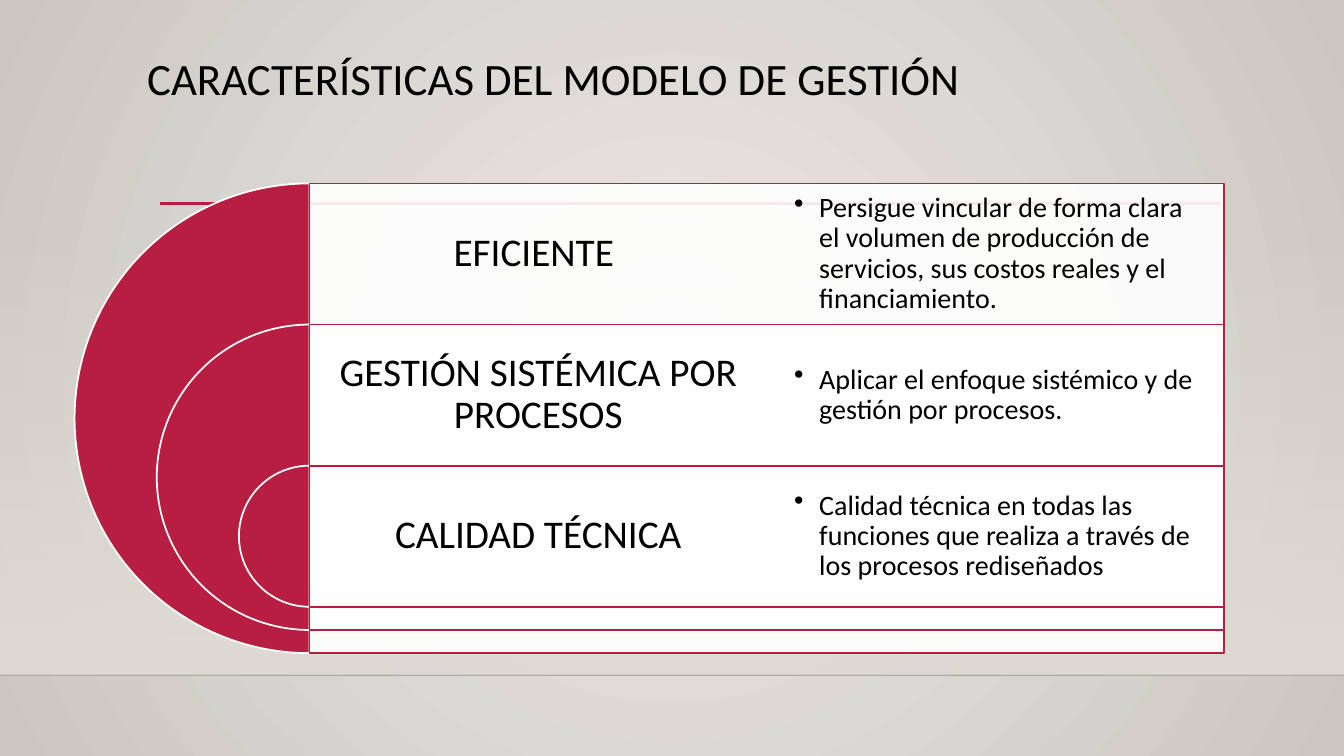
from pptx import Presentation
from pptx.dml.color import RGBColor
from pptx.enum.shapes import MSO_CONNECTOR, MSO_SHAPE
from pptx.enum.text import MSO_ANCHOR, PP_ALIGN
from pptx.oxml import parse_xml
from pptx.oxml.ns import nsdecls, qn
from pptx.util import Inches, Pt

RED = "B71E42"
WHITE = "FFFFFF"


def rgb(value):
    return RGBColor.from_string(value)


def replace_first(element, tag, xml):
    old = next(element.iter(qn(tag)))
    old.getparent().replace(old, parse_xml(xml))


prs = Presentation()
prs.slide_width = Inches(13.33)
prs.slide_height = Inches(7.5)
s = prs.slides.add_slide(prs.slide_layouts[5])

s.background.fill.solid()
replace_first(s._element, "a:solidFill", f"""
<a:gradFill {nsdecls('a')} rotWithShape="1"><a:gsLst>
<a:gs pos="0"><a:srgbClr val="ECEAE7"/></a:gs>
<a:gs pos="100000"><a:srgbClr val="CAC7C1"/></a:gs></a:gsLst>
<a:path path="circle"><a:fillToRect l="50000" t="50000" r="50000" b="50000"/></a:path>
</a:gradFill>""")

wall = s.shapes.add_shape(MSO_SHAPE.RECTANGLE, 0, Inches(2.21), prs.slide_width, Inches(4.49))
wall.shadow.inherit = False
wall.line.fill.background()
wall.fill.solid()
replace_first(wall._element, "a:solidFill", f"""
<a:gradFill {nsdecls('a')} rotWithShape="1"><a:gsLst>
<a:gs pos="0"><a:srgbClr val="DFDBD5"><a:alpha val="0"/></a:srgbClr></a:gs>
<a:gs pos="100000"><a:srgbClr val="DFDBD5"/></a:gs></a:gsLst>
<a:lin ang="5400000" scaled="0"/></a:gradFill>""")

for x1, x2, y, color, width, alpha in [
    (0, 13.33, 6.7, "000001", 1, 20),
    (1.59, 12.1, 2.02, RED, 2.5, 100),
]:
    line = s.shapes.add_connector(
        MSO_CONNECTOR.STRAIGHT, Inches(x1), Inches(y), Inches(x2), Inches(y))
    line.line.color.rgb = rgb(color)
    line.line.width = Pt(width)
    replace_first(line._element, "a:srgbClr",
                  f'<a:srgbClr {nsdecls("a")} val="{color}"><a:alpha val="{alpha * 1000}"/></a:srgbClr>')
    line._element.spPr.append(parse_xml(f'<a:effectLst {nsdecls("a")}/>'))

title = s.shapes.title
title.left, title.top, title.width, title.height = [Inches(v) for v in (1.36, 0.51, 11.32, 0.86)]
tf = title.text_frame
tf.vertical_anchor = MSO_ANCHOR.TOP
p = tf.paragraphs[0]
p.alignment = PP_ALIGN.LEFT
p.line_spacing = 0.9
r = p.add_run()
r.text = "CARACTERÍSTICAS DEL MODELO DE GESTIÓN"
r.font.name = "Calibri"
r.font.size = Pt(32)
r.font.color.rgb = rgb("000000")

features = [
    ("EFICIENTE ", "Persigue vincular de forma clara el volumen de producción de servicios, "
                   "sus costos reales y el financiamiento."),
    ("GESTIÓN SISTÉMICA POR PROCESOS", "Aplicar el enfoque sistémico y de gestión por procesos."),
    ("CALIDAD TÉCNICA", "Calidad técnica en todas las funciones que realiza a través de "
                        "los procesos rediseñados"),
]
left, top, row, column = 3.07, 1.82, 1.4, 4.535

for i, (name, detail) in enumerate(features):
    y = top + i * row
    size = 4.66 - i * 1.63

    pie = s.shapes.add_shape(
        MSO_SHAPE.PIE, Inches(left - size / 2), Inches(y), Inches(size), Inches(size))
    pie.adjustments[0] = 54
    pie.adjustments[1] = 162
    band = s.shapes.add_shape(
        MSO_SHAPE.RECTANGLE, Inches(left), Inches(y), Inches(2 * column), Inches(size))
    for sp, fill, outline in [(pie, RED, WHITE), (band, WHITE, RED)]:
        sp.shadow.inherit = False
        sp.fill.solid()
        sp.fill.fore_color.rgb = rgb(fill)
        sp.line.color.rgb = rgb(outline)
        sp.line.width = Pt(1.25)
    replace_first(band._element, "a:srgbClr",
                  f'<a:srgbClr {nsdecls("a")} val="{WHITE}"><a:alpha val="90000"/></a:srgbClr>')

    for x, text, points, inset, bullet in [
        (left, name, 28, 0.12, False),
        (left + column, detail, 20, 0.27, True),
    ]:
        box = s.shapes.add_textbox(Inches(x), Inches(y), Inches(column), Inches(row))
        tf = box.text_frame
        tf.word_wrap = True
        tf.vertical_anchor = MSO_ANCHOR.MIDDLE
        tf.margin_left = tf.margin_right = tf.margin_top = tf.margin_bottom = Inches(inset)
        p = tf.paragraphs[0]
        p.line_spacing = 0.9
        if bullet:
            pPr = p._p.get_or_add_pPr()
            pPr.set("marL", str(Inches(0.25)))
            pPr.set("indent", str(-Inches(0.25)))
            pPr.append(parse_xml(f'<a:buChar {nsdecls("a")} char="•"/>'))
        else:
            p.alignment = PP_ALIGN.CENTER
        r = p.add_run()
        r.text = text
        r.font.name = "Calibri"
        r.font.size = Pt(points)
        r.font.color.rgb = rgb("000000")

prs.save("out.pptx")
